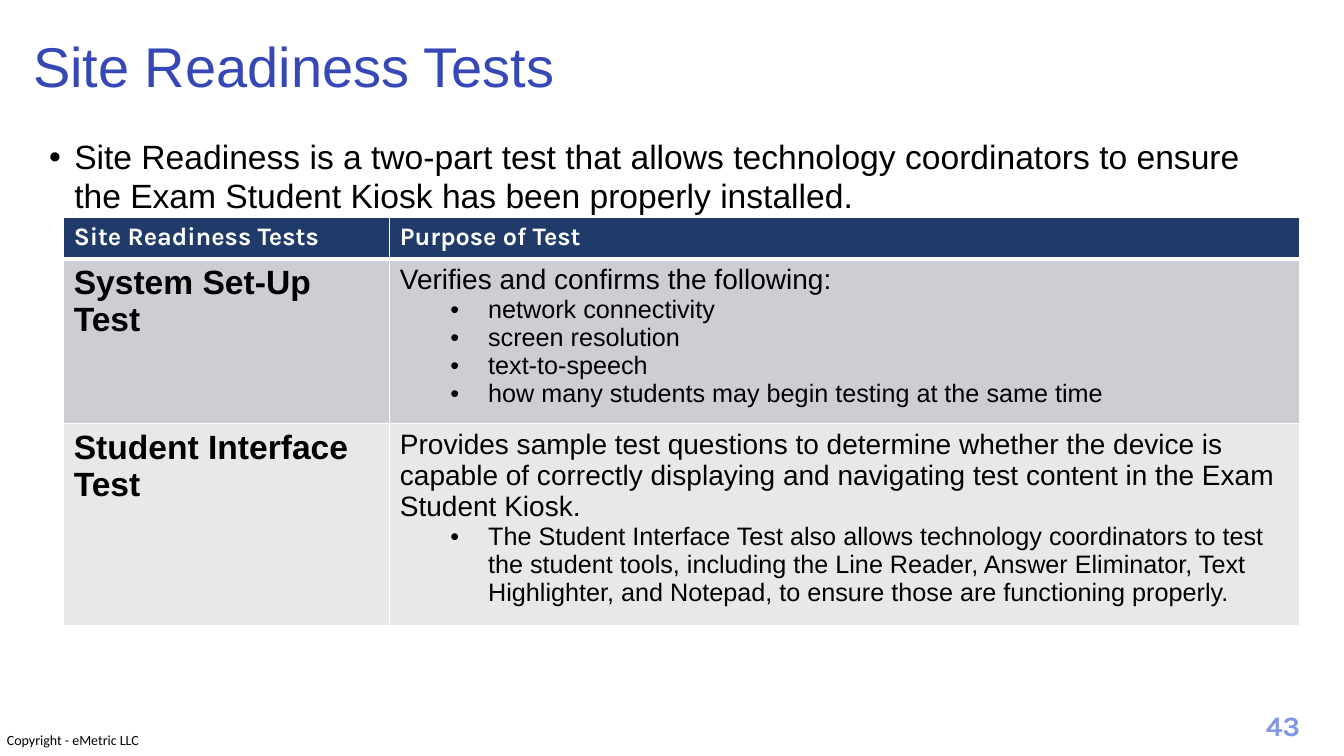
from dataclasses import dataclass

from lxml.etree import SubElement
from pptx import Presentation
from pptx.dml.color import RGBColor as RGB
from pptx.enum.text import MSO_ANCHOR as Anchor, PP_ALIGN as Align
from pptx.oxml.ns import qn
from pptx.util import Pt


@dataclass(frozen=True)
class Theme:
    title: str = "3647B6"
    text: str = "000000"
    white: str = "FFFFFF"
    header: str = "203B6A"
    bands: tuple = ("CDCED4", "E8E8EB")
    number: str = "8397E7"
    body_font: str = "Arial"
    accent_font: str = "Karla"
    footer_font: str = "Calibri"
    title_size: int = 40
    lead_size: int = 24
    cell_size: int = 20
    small_size: int = 18
    footer_size: int = 10


def write(p, text, *, size, font, color, bold=False, align=Align.LEFT,
          spacing=None, bullet=None, level=0):
    """Fill a paragraph; bullet is (left margin, hanging indent) in points."""
    p.alignment = align
    p.level = level
    if spacing:
        p.line_spacing = spacing
    if bullet:
        margin, hang = bullet
        pPr = p._p.get_or_add_pPr()
        pPr.set("marL", str(Pt(margin)))
        pPr.set("indent", str(-Pt(hang)))
        SubElement(pPr, qn("a:buFont"), typeface="Arial")
        SubElement(pPr, qn("a:buChar"), char="•")
    r = p.add_run()
    r.text = text
    r.font.size = Pt(size)
    r.font.name = font
    r.font.bold = bold
    r.font.color.rgb = RGB.from_string(color)


class SlideBuilder:
    def __init__(self, prs, theme):
        self.theme = theme
        self.slide = prs.slides.add_slide(prs.slide_layouts[6])

    def text(self, text, x, y, w, h, *, anchor=Anchor.TOP, inset=True,
             wrap=True, **fmt):
        tf = self.slide.shapes.add_textbox(Pt(x), Pt(y), Pt(w), Pt(h)).text_frame
        tf.word_wrap = wrap
        tf.vertical_anchor = anchor
        if not inset:
            tf.margin_left = tf.margin_right = tf.margin_top = tf.margin_bottom = 0
        write(tf.paragraphs[0], text, **fmt)

    def border(self, cell, bottom=1):
        """Draw white cell edges, placed ahead of the cell's fill."""
        tcPr = cell._tc.get_or_add_tcPr()
        edges = {"lnL": 1, "lnR": 1, "lnT": 1, "lnB": bottom}
        for i, (tag, width) in enumerate(edges.items()):
            ln = SubElement(tcPr, qn(f"a:{tag}"), w=str(Pt(width)))
            fill = SubElement(ln, qn("a:solidFill"))
            SubElement(fill, qn("a:srgbClr"), val=self.theme.white)
            tcPr.insert(i, ln)

    def cell(self, cell, fill, paragraphs, bottom=1):
        cell.fill.solid()
        cell.fill.fore_color.rgb = RGB.from_string(fill)
        self.border(cell, bottom)
        tf = cell.text_frame
        for i, (text, fmt) in enumerate(paragraphs):
            write(tf.add_paragraph() if i else tf.paragraphs[0], text, **fmt)

    def table(self, header, rows, x, y, widths, heights):
        t = self.theme
        table = self.slide.shapes.add_table(
            len(heights), len(widths), Pt(x), Pt(y),
            Pt(sum(widths)), Pt(sum(heights))).table
        for column, width in zip(table.columns, widths):
            column.width = Pt(width)
        for row, height in zip(table.rows, heights):
            row.height = Pt(height)

        head = dict(size=t.small_size, font=t.accent_font, color=t.white, bold=True)
        body = dict(font=t.body_font, color=t.text)
        name_fmt = dict(body, size=t.lead_size, bold=True)
        purpose_fmt = dict(body, size=t.cell_size)
        point_fmt = dict(body, size=t.small_size, bullet=(63, 27), level=1)
        for c, label in enumerate(header):
            self.cell(table.cell(0, c), t.header, [(label, head)], bottom=3)
        for r, (name, purpose, points) in enumerate(rows, 1):
            fill = t.bands[(r - 1) % len(t.bands)]
            self.cell(table.cell(r, 0), fill, [(name, name_fmt)])
            self.cell(table.cell(r, 1), fill,
                      [(purpose, purpose_fmt)] + [(s, point_fmt) for s in points])


HEADER = ("Site Readiness Tests", "Purpose of Test")
TESTS = [
    ("System Set-Up Test", "Verifies and confirms the following:",
     ["network connectivity", "screen resolution", "text-to-speech",
      "how many students may begin testing at the same time"]),
    ("Student Interface Test",
     "Provides sample test questions to determine whether the device is capable of "
     "correctly displaying and navigating test content in the Exam Student Kiosk.",
     ["The Student Interface Test also allows technology coordinators to test the "
      "student tools, including the Line Reader, Answer Eliminator, Text Highlighter, "
      "and Notepad, to ensure those are functioning properly."]),
]


def main():
    prs = Presentation()
    prs.slide_width, prs.slide_height = Pt(960), Pt(540)
    t = Theme()
    s = SlideBuilder(prs, t)
    s.text("Copyright - eMetric LLC", 5, 522.5, 97, 12, inset=False, wrap=False,
           size=t.footer_size, font=t.footer_font, color=t.text)
    s.text("43", 894, 502.5, 45, 32, align=Align.CENTER, bold=True,
           size=t.cell_size, font=t.accent_font, color=t.number)
    s.text("Site Readiness Tests", 16.5, 23, 943.5, 53.5, anchor=Anchor.MIDDLE,
           spacing=0.9, size=t.title_size, font=t.body_font, color=t.title)
    s.text("Site Readiness is a two-part test that allows technology coordinators "
           "to ensure the Exam Student Kiosk has been properly installed.",
           28, 95, 900, 397.5, bullet=(18, 18), spacing=0.97,
           size=t.lead_size, font=t.body_font, color=t.text)
    s.table(HEADER, TESTS, 45.5, 155.5, widths=(233, 650), heights=(29.5, 109.5, 136.5))
    prs.save("out.pptx")


if __name__ == "__main__":
    main()
